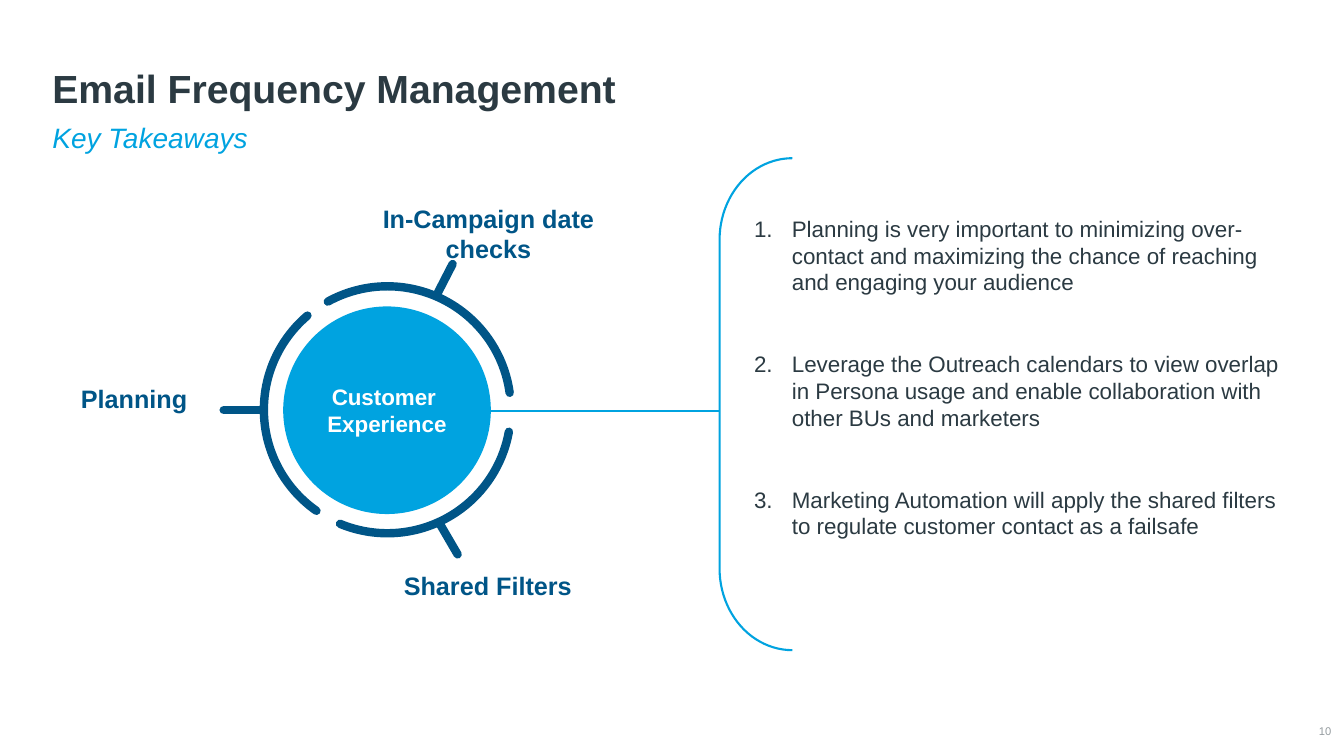
from dataclasses import dataclass
from typing import Any

from lxml.etree import SubElement
from pptx import Presentation
from pptx.dml.color import RGBColor
from pptx.enum.shapes import MSO_CONNECTOR, MSO_SHAPE
from pptx.enum.text import MSO_ANCHOR, MSO_AUTO_SIZE, PP_ALIGN
from pptx.oxml.ns import qn
from pptx.util import Pt

BLUE, NAVY, INK, GREY, WHITE = "00A3E0", "005587", "2B3A42", "959CA0", "FFFFFF"
RING_BOX = (188.5, 204.5, 176.4, 176.4)
HUB_BOX = (202.3, 218.9, 148.3, 148.3)
BRACKET_BOX = (514, 113, 52, 351.4)
LIST_GAP = 39.2
LIST_INDENT = 27
NO_INSETS = dict.fromkeys(("margin_left", "margin_top", "margin_right", "margin_bottom"), 0)


@dataclass(frozen=True)
class Label:
    """A centred caption beside the ring."""
    text: str
    box: tuple[float, float, float, float]


@dataclass(frozen=True)
class Segment:
    """A ring arc, in degrees, with the spoke that leads to its label."""
    start: float
    end: float
    spoke: tuple[float, float, float, float]


LABELS = [
    Label("In-Campaign date checks", (261.4, 141.8, 175, 51.1)),
    Label("Shared Filters", (251.3, 403.9, 194.4, 28.8)),
    Label("Planning", (27.4, 270, 136.8, 28.8)),
]
SEGMENTS = [
    Segment(241.15, 352.1, (311.8, 211, 323.3, 188.6)),
    Segment(125.05, 229.7, (159.8, 293, 187.2, 293)),
    Segment(10.25, 112.5, (313.9, 373.7, 326.9, 396)),
]
TAKEAWAYS = [
    "Planning is very important to minimizing over-contact and maximizing the chance "
    "of reaching and engaging your audience",
    "Leverage the Outreach calendars to view overlap in Persona usage and enable "
    "collaboration with other BUs and marketers",
    "Marketing Automation will apply the shared filters to regulate customer contact "
    "as a failsafe",
]


def color(value: str) -> RGBColor:
    """Turn a hex string into a colour."""
    return RGBColor.from_string(value)


def apply(target: Any, formats: dict[str, Any]) -> None:
    """Set every attribute named in a dict of format values."""
    for name, value in formats.items():
        setattr(target, name, value)


def points(values: tuple[float, ...]) -> list[Pt]:
    """Convert numbers to point lengths."""
    return [Pt(value) for value in values]


def place(shape: Any, box: tuple[float, ...]) -> None:
    """Move and size a shape."""
    apply(shape, dict(zip(("left", "top", "width", "height"), points(box))))


def write(shape: Any, lines: list[str], size: float, ink: str, frame: dict[str, Any],
          layout: dict[str, Any], font: dict[str, Any]) -> None:
    """Fill a shape with formatted paragraphs."""
    text_frame = shape.text_frame
    text_frame.text = "\n".join(lines)
    apply(text_frame, {"auto_size": MSO_AUTO_SIZE.NONE, "word_wrap": True} | frame)
    for paragraph in text_frame.paragraphs:
        apply(paragraph, {"space_before": Pt(0)} | layout)
        for run in paragraph.runs:
            apply(run.font, {"name": "Arial", "size": Pt(size)} | font)
            run.font.color.rgb = color(ink)


def set_bullet(paragraph: Any, tag: str, indent: float, **attributes: str) -> None:
    """Give a paragraph its bullet kind and hanging indent."""
    properties = paragraph._p.get_or_add_pPr()
    properties.set("marL", str(Pt(indent)))
    properties.set("indent", str(-Pt(indent)))
    SubElement(properties, qn(tag), attributes)


def style_line(shape: Any, ink: str, width: float, round_cap: bool = False) -> Any:
    """Colour an outline and return its XML element."""
    shape.line.color.rgb = color(ink)
    shape.line.width = Pt(width)
    outline = shape._element.spPr.find(qn("a:ln"))
    if round_cap:
        outline.set("cap", "rnd")
    return outline


def add_line(slide: Any, ends: tuple[float, ...], ink: str, width: float,
             round_cap: bool = False) -> Any:
    """Draw a straight line without shadow and return its outline element."""
    connector = slide.shapes.add_connector(MSO_CONNECTOR.STRAIGHT, *points(ends))
    outline = style_line(connector, ink, width, round_cap)
    SubElement(connector._element.spPr, qn("a:effectLst"))
    return outline


def add_outline(slide: Any, kind: MSO_SHAPE, box: tuple[float, ...], adjustments: list[float],
                ink: str, width: float, round_cap: bool = False) -> None:
    """Draw an unfilled preset shape."""
    shape = slide.shapes.add_shape(kind, *points(box))
    shape.shadow.inherit = False
    shape.fill.background()
    for index, value in enumerate(adjustments):
        shape.adjustments[index] = value
    style_line(shape, ink, width, round_cap)


def add_headings(slide: Any) -> None:
    """Write the title and subtitle."""
    title, subtitle = slide.shapes.title, slide.placeholders[1]
    place(title, (30.2, 23, 892.8, 60.5))
    write(title, ["Email Frequency Management"], 28, INK,
          {"vertical_anchor": MSO_ANCHOR.BOTTOM},
          {"alignment": PP_ALIGN.LEFT, "line_spacing": 0.9}, {"bold": True})
    place(subtitle, (30.2, 85, 892.8, 31.7))
    write(subtitle, ["Key Takeaways"], 20, BLUE, {}, {"line_spacing": 0.9}, {"italic": True})
    set_bullet(subtitle.text_frame.paragraphs[0], "a:buNone", 0)


def add_takeaways(slide: Any) -> None:
    """Write the numbered list."""
    body = slide.placeholders[2]
    place(body, (538.6, 153.4, 384.5, 288.7))
    write(body, TAKEAWAYS, 16, INK, NO_INSETS, {}, {})
    for index, paragraph in enumerate(body.text_frame.paragraphs):
        set_bullet(paragraph, "a:buAutoNum", LIST_INDENT, type="arabicPeriod")
        if index:
            paragraph.space_before = Pt(LIST_GAP)


def add_ring(slide: Any) -> None:
    """Draw the hub, its ring segments, spokes and labels."""
    centred = {"alignment": PP_ALIGN.CENTER}
    hub = slide.shapes.add_shape(MSO_SHAPE.OVAL, *points(HUB_BOX))
    hub.shadow.inherit = False
    hub.fill.solid()
    hub.fill.fore_color.rgb = color(BLUE)
    hub.line.fill.background()
    write(hub, ["Customer ", "Experience"], 16, WHITE,
          NO_INSETS | {"word_wrap": False, "vertical_anchor": MSO_ANCHOR.MIDDLE},
          centred, {"bold": True})
    for segment in SEGMENTS:
        angles = [segment.start * 0.6, segment.end * 0.6]
        add_outline(slide, MSO_SHAPE.ARC, RING_BOX, angles, NAVY, 6, True)
        add_line(slide, segment.spoke, NAVY, 6, True)
    for label in LABELS:
        box = slide.shapes.add_textbox(*points(label.box))
        write(box, [label.text], 18, NAVY, {}, centred, {"bold": True})


def main() -> None:
    """Build and save the slide."""
    presentation = Presentation()
    apply(presentation, {"slide_width": Pt(960), "slide_height": Pt(540)})
    slide = presentation.slides.add_slide(presentation.slide_layouts[3])
    add_headings(slide)
    link = add_line(slide, (514, 293.8, 319.7, 293.8), BLUE, 1.5)
    SubElement(link, qn("a:tailEnd"), type="oval")
    add_outline(slide, MSO_SHAPE.LEFT_BRACKET, BRACKET_BOX, [1.12], BLUE, 1.5)
    add_ring(slide)
    add_takeaways(slide)
    number = slide.shapes.add_textbox(*points((923, 515.5, 28.1, 13.7)))
    write(number, ["10"], 8, GREY, NO_INSETS | {"vertical_anchor": MSO_ANCHOR.MIDDLE},
          {"alignment": PP_ALIGN.RIGHT}, {})
    presentation.save("out.pptx")


if __name__ == "__main__":
    main()
